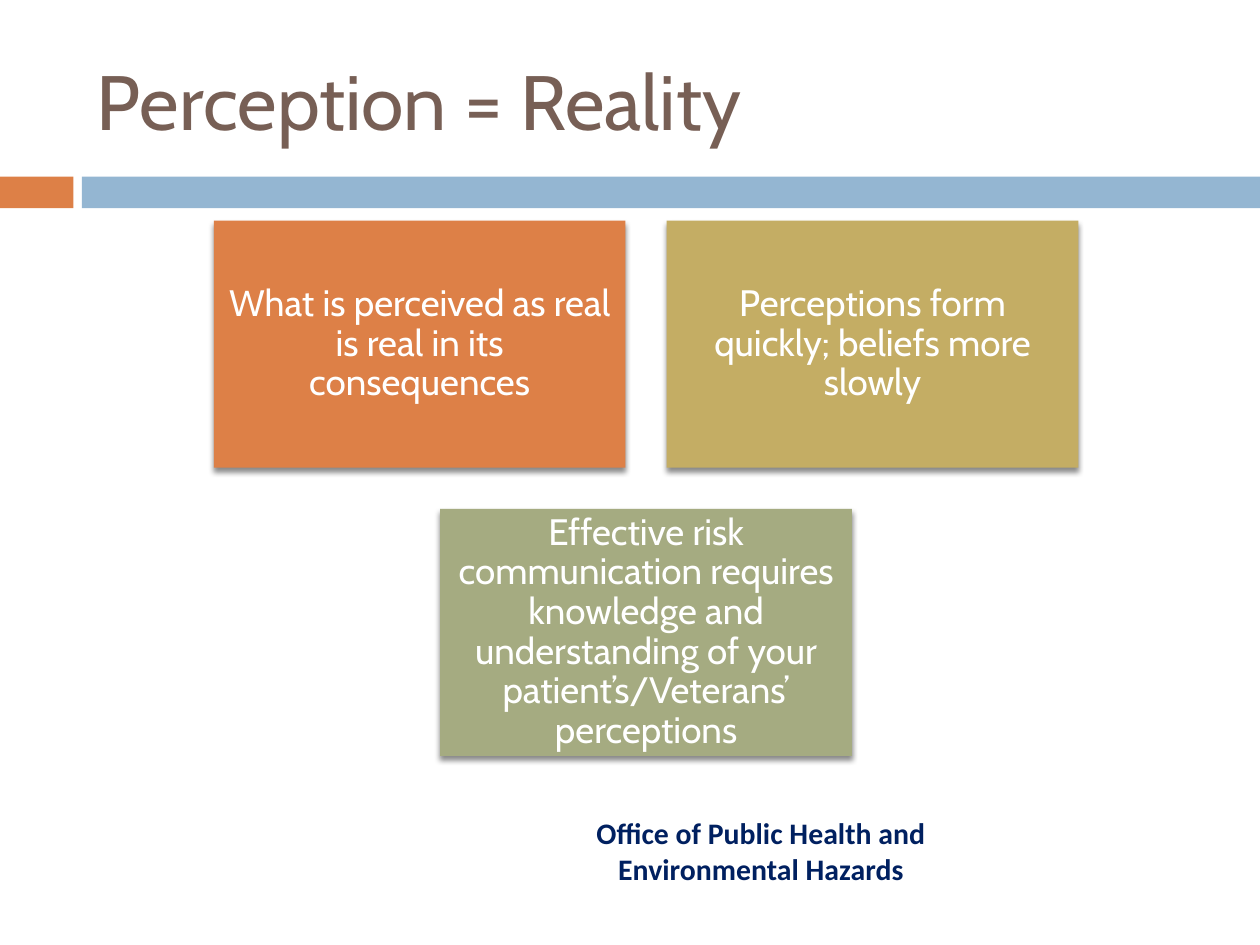
from lxml import etree
from pptx import Presentation
from pptx.dml.color import RGBColor
from pptx.enum.shapes import MSO_SHAPE as Shape
from pptx.enum.text import MSO_ANCHOR as Anchor, MSO_AUTO_SIZE as AutoSize, PP_ALIGN as Align
from pptx.oxml.ns import qn
from pptx.util import Cm, Pt

COLORS = {
    "orange": "DD8047",
    "blue": "94B6D2",
    "gold": "C4AD64",
    "green": "A5AB81",
    "brown": "775F55",
    "navy": "002060",
    "white": "FFFFFF",
    "black": "000000",
}
CARDS = [
    ("What is perceived as real is real in its consequences", "orange"),
    ("Perceptions form quickly; beliefs more slowly", "gold"),
    ("Effective risk communication requires knowledge and understanding "
     "of your patient’s/Veterans’ perceptions", "green"),
]


def color(name):
    return RGBColor.from_string(COLORS[name])


def write(frame, text, size, font, tint, align, bold=False):
    frame.word_wrap = True
    para = frame.paragraphs[0]
    para.alignment = align
    span = para.add_run()
    span.text = text
    span.font.size = Pt(size)
    span.font.name = font
    span.font.bold = bold
    span.font.color.rgb = color(tint)
    return para


def add_block(page, left, top, width, height, fill):
    block = page.shapes.add_shape(Shape.RECTANGLE, Cm(left), Cm(top), Cm(width), Cm(height))
    block.shadow.inherit = False
    block.fill.solid()
    block.fill.fore_color.rgb = color(fill)
    block.line.fill.background()
    return block


def add_drop_shadow(block):
    effects = block._element.spPr.find(qn("a:effectLst"))
    shadow = etree.SubElement(effects, qn("a:outerShdw"), blurRad=str(Pt(3)),
                              dist=str(Pt(2.4)), dir="5400000", rotWithShape="0")
    shade = etree.SubElement(shadow, qn("a:srgbClr"), val=COLORS["black"])
    etree.SubElement(shade, qn("a:alpha"), val="45000")


def place_title(page, left, top, width, height):
    title = page.shapes.title
    title.left, title.top, title.width, title.height = Cm(left), Cm(top), Cm(width), Cm(height)
    frame = title.text_frame
    frame.auto_size = AutoSize.NONE
    frame.vertical_anchor = Anchor.MIDDLE
    write(frame, "Perception = Reality", 44, "Cabin", "brown", Align.LEFT)


def add_band(page, left, top, width, height):
    tab, gap = 1.48, 0.17
    add_block(page, left, top, tab, height, "orange")
    add_block(page, left + tab + gap, top, width - tab - gap, height, "blue")


def add_cards(page, left, top, width, height):
    # Two cards per row; a card alone in its row is centred
    gap = 0.83
    card_width, card_height = (width - gap) / 2, (height - gap) / 2
    for index, (text, fill) in enumerate(CARDS):
        row, column = divmod(index, 2)
        in_row = min(2, len(CARDS) - row * 2)
        indent = (2 - in_row) * (card_width + gap) / 2
        card = add_block(page, left + indent + column * (card_width + gap),
                         top + row * (card_height + gap), card_width, card_height, fill)
        add_drop_shadow(card)
        frame = card.text_frame
        frame.margin_left = frame.margin_right = Cm(0.23)
        frame.margin_top = frame.margin_bottom = Cm(0.23)
        frame.vertical_anchor = Anchor.MIDDLE
        para = write(frame, text, 21, "Cabin", "white", Align.CENTER)
        para.line_spacing = 0.9


def add_footer(page, left, top, width, height):
    box = page.shapes.add_textbox(Cm(left), Cm(top), Cm(width), Cm(height))
    box.text_frame.auto_size = AutoSize.SHAPE_TO_FIT_TEXT
    write(box.text_frame, "Office of Public Health and Environmental Hazards",
          17, "Calibri", "navy", Align.CENTER, bold=True)


def main():
    deck = Presentation()
    deck.slide_width, deck.slide_height = Cm(25.4), Cm(19.05)
    page = deck.slides.add_slide(deck.slide_layouts[5])

    add_band(page, 0, 3.56, 25.4, 0.64)
    add_footer(page, 11.63, 16.31, 7.42, 1.7)
    place_title(page, 1.7, 0.64, 22.66, 2.74)
    add_cards(page, 4.31, 4.45, 17.43, 10.79)

    deck.save("out.pptx")


if __name__ == "__main__":
    main()
